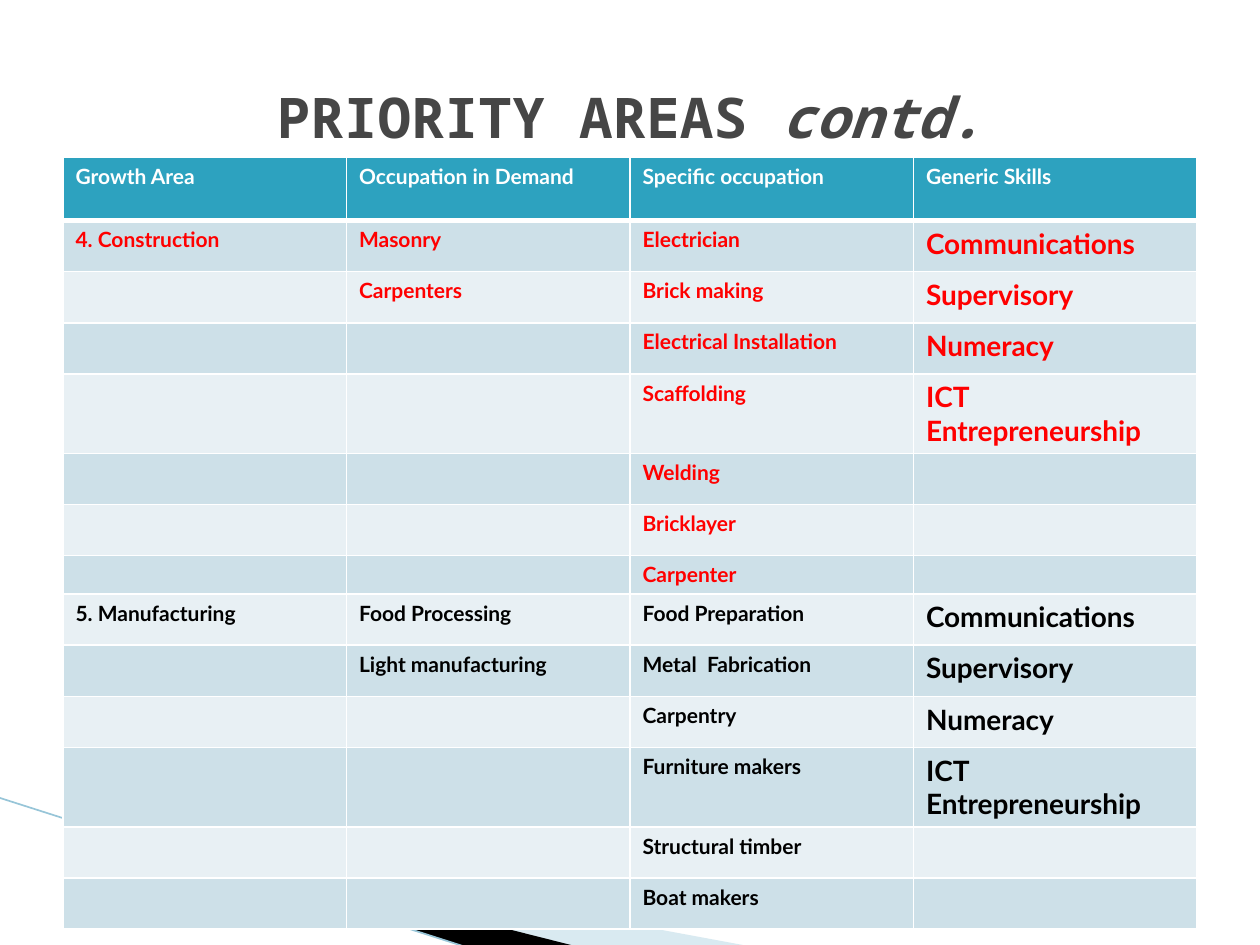
from lxml import etree
from pptx import Presentation
from pptx.dml.color import RGBColor
from pptx.enum.shapes import MSO_CONNECTOR
from pptx.enum.text import MSO_ANCHOR, PP_ALIGN
from pptx.oxml.ns import qn
from pptx.util import Inches, Pt

STRAIGHT = MSO_CONNECTOR.STRAIGHT
MIDDLE = MSO_ANCHOR.MIDDLE
CENTER = PP_ALIGN.CENTER

HEADER = ["Growth Area", "Occupation in Demand", "Specific occupation", "Generic Skills"]
CONSTRUCTION = [
    ["4. Construction", "Masonry", "Electrician", "Communications"],
    ["", "Carpenters", "Brick making", "Supervisory"],
    ["", "", "Electrical Installation", "Numeracy"],
    ["", "", "Scaffolding", "ICT Entrepreneurship"],
    ["", "", "Welding", ""],
    ["", "", "Bricklayer", ""],
    ["", "", "Carpenter", ""],
]
MANUFACTURING = [
    ["5. Manufacturing", "Food Processing", "Food Preparation", "Communications"],
    ["", "Light manufacturing", "Metal  Fabrication", "Supervisory"],
    ["", "", "Carpentry", "Numeracy"],
    ["", "", "Furniture makers", "ICT Entrepreneurship"],
    ["", "", "Structural timber", ""],
    ["", "", "Boat makers", ""],
]
TABLE_HEIGHT = 6.12
SPECIAL_HEIGHTS = {0: 0.5, 4: 0.63, 7: 0.3, 11: 0.63}


def colour(value):
    """Turn a hex string into a colour."""
    return RGBColor.from_string(value)


class SlideBuilder:
    """Holds the style and the current slide."""

    title_font = "Noto Sans Mono"
    body_font = "Lato"
    header_fill = "2DA2BF"
    band_fills = ("E8F0F4", "CDE0E8")
    border = "FFFFFF"

    def __init__(self, slide):
        """Keep the slide to draw on."""
        self.slide = slide

    def wedge(self, points, fill, opacity=100):
        """Draw a filled outline through points given in inches."""
        corners = [(Inches(x), Inches(y)) for x, y in points]
        builder = self.slide.shapes.build_freeform(*corners[0], scale=1.0)
        builder.add_line_segments(corners[1:], close=True)
        shape = builder.convert_to_shape()
        shape.shadow.inherit = False
        shape.line.fill.background()
        shape.fill.solid()
        shape.fill.fore_color.rgb = colour(fill)
        if opacity < 100:
            tint = shape._element.spPr.find(".//" + qn("a:srgbClr"))
            etree.SubElement(tint, qn("a:alpha"), val=str(opacity * 1000))

    def line(self, start, end, stroke, width):
        """Draw a straight line between two points given in inches."""
        ends = [Inches(value) for value in (*start, *end)]
        connector = self.slide.shapes.add_connector(STRAIGHT, *ends)
        connector.line.color.rgb = colour(stroke)
        connector.line.width = Pt(width)
        etree.SubElement(connector._element.spPr, qn("a:effectLst"))

    def title(self, parts, left, top, width, height):
        """Add a centred title from (text, italic) parts."""
        box = self.slide.shapes.add_textbox(
            Inches(left), Inches(top), Inches(width), Inches(height))
        frame = box.text_frame
        frame.word_wrap = True
        frame.vertical_anchor = MIDDLE
        para = frame.paragraphs[0]
        para.alignment = CENTER
        for text, italic in parts:
            span = para.add_run()
            span.text = text
            span.font.italic = italic
            self.style(span, self.title_font, 32, "464646")

    def style(self, span, font, size, ink):
        """Set the bold type of one run."""
        span.font.name = font
        span.font.size = Pt(size)
        span.font.bold = True
        span.font.color.rgb = colour(ink)

    def cell(self, cell, text, size, ink, fill, bottom):
        """Fill, border and write one table cell."""
        properties = cell._tc.get_or_add_tcPr()
        for side, width in (("L", 1), ("R", 1), ("T", 1), ("B", bottom)):
            edge = etree.SubElement(properties, qn(f"a:ln{side}"), w=str(Pt(width)))
            paint = etree.SubElement(edge, qn("a:solidFill"))
            etree.SubElement(paint, qn("a:srgbClr"), val=self.border)
        cell.fill.solid()
        cell.fill.fore_color.rgb = colour(fill)
        para = cell.text_frame.paragraphs[0]
        if text:
            para.text = text
            self.style(para.runs[0], self.body_font, size, ink)
        else:
            etree.SubElement(para._p, qn("a:endParaRPr"), sz=str(size * 100))

    def table(self, rows, inks, left, top, width):
        """Add the banded table with one text colour per row."""
        frame = self.slide.shapes.add_table(
            len(rows), len(rows[0]), Inches(left), Inches(top),
            Inches(width), Inches(TABLE_HEIGHT))
        table = frame.table
        table.horz_banding = False
        usual = (TABLE_HEIGHT - sum(SPECIAL_HEIGHTS.values())) / (len(rows) - len(SPECIAL_HEIGHTS))
        for index, (texts, ink) in enumerate(zip(rows, inks)):
            table.rows[index].height = Inches(SPECIAL_HEIGHTS.get(index, usual))
            header = index == 0
            fill = self.header_fill if header else self.band_fills[index % 2]
            for column, text in enumerate(texts):
                large = column == 3 and text and not header
                self.cell(table.cell(index, column), text, 16 if large else 12,
                          ink, fill, 3 if header else 1)


def main():
    """Build and save the deck."""
    deck = Presentation()
    deck.slide_width, deck.slide_height = Inches(10), Inches(7.5)
    page = SlideBuilder(deck.slides.add_slide(deck.slide_layouts[6]))
    page.wedge([(0.55, 6.51), (5.95, 7.51), (4.56, 7.51), (0.55, 6.5)], "A0CBDC", 40)
    page.wedge([(0.53, 6.49), (4.57, 7.51), (3.72, 7.52), (0.54, 6.5)], "000000")
    page.line((-0.01, 6.33), (3.71, 7.52), "97C5D8", 0.95)
    rows = [HEADER] + CONSTRUCTION + MANUFACTURING
    inks = ["FFFFFF"] + ["FF0000"] * len(CONSTRUCTION) + ["000000"] * len(MANUFACTURING)
    page.table(rows, inks, 0.5, 1.25, 9)
    page.title([("PRIORITY AREAS ", False), ("contd.", True)], 0.5, 0.3, 9, 1.25)
    deck.save("out.pptx")


if __name__ == "__main__":
    main()
